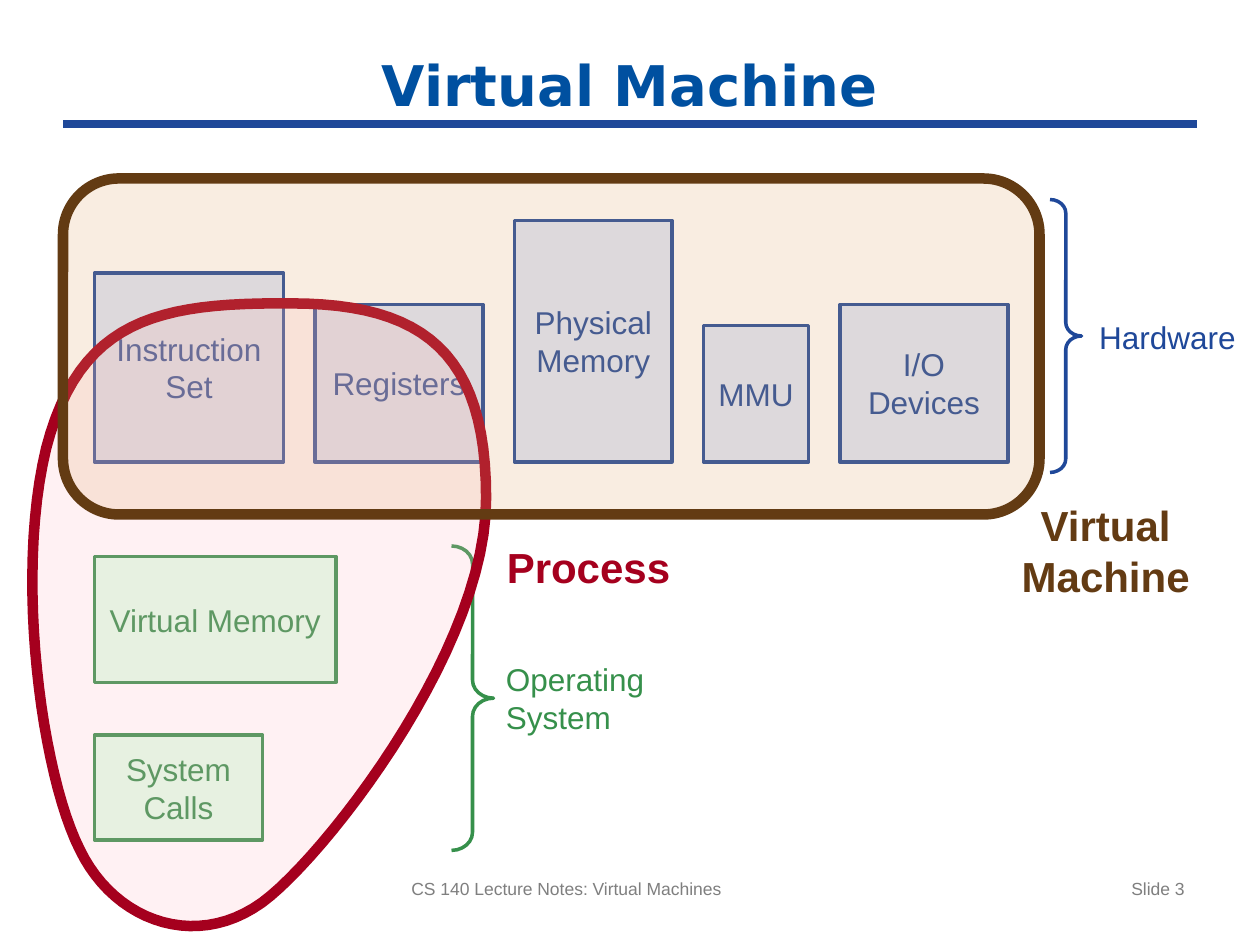
from lxml import etree
from pptx import Presentation
from pptx.dml.color import RGBColor
from pptx.enum.shapes import MSO_CONNECTOR, MSO_SHAPE
from pptx.enum.text import MSO_ANCHOR, PP_ALIGN
from pptx.oxml.ns import qn
from pptx.util import Pt

PX = 7620  # EMU per px, 120 px to the inch
RECT, ROUND, BRACE = MSO_SHAPE.RECTANGLE, MSO_SHAPE.ROUNDED_RECTANGLE, MSO_SHAPE.RIGHT_BRACE
LEFT, MID, RIGHT = PP_ALIGN.LEFT, PP_ALIGN.CENTER, PP_ALIGN.RIGHT

BLUE = RGBColor(0x1F, 0x48, 0x99)
PALE = RGBColor(0xDC, 0xE6, 0xF8)
GREEN = RGBColor(0x36, 0x90, 0x4B)
MINT = RGBColor(0xE1, 0xFF, 0xE8)
RED = RGBColor(0xA5, 0x00, 0x1E)
PINK = RGBColor(0xFF, 0xBA, 0xC7)
BROWN = RGBColor(0x63, 0x3B, 0x13)
TAN = RGBColor(0xE1, 0xA7, 0x6D)
GRAY = RGBColor(0x7F, 0x7F, 0x7F)
NAVY = RGBColor(0x00, 0x50, 0xA0)

deck = Presentation()
deck.slide_width, deck.slide_height = 1200 * PX, 900 * PX
slide = deck.slides.add_slide(deck.slide_layouts[5])
shapes = slide.shapes


def write(shape, text, size, color, align=MID, bold=False, font="Arial", wrap=True):
    frame = shape.text_frame
    frame.text = text
    frame.word_wrap = wrap
    for para in frame.paragraphs:
        para.alignment = align
        para.font.name, para.font.size = font, Pt(size)
        para.font.bold, para.font.color.rgb = bold, color


def paint(shape, line, width, fill=None, alpha=None):
    shape.shadow.inherit = False
    shape.line.color.rgb = line
    shape.line.width = Pt(width)
    if fill is None:
        shape.fill.background()
        return
    shape.fill.solid()
    shape.fill.fore_color.rgb = fill
    if alpha:
        tone = shape.fill._xPr.find(qn("a:solidFill"))[0]
        etree.SubElement(tone, qn("a:alpha")).set("val", str(alpha * 1000))


# Title and rule
title = shapes.title
title.left, title.top, title.width, title.height = 60 * PX, 40 * PX, 1080 * PX, 80 * PX
title.text_frame.vertical_anchor = MSO_ANCHOR.MIDDLE
write(title, "Virtual Machine", 32, NAVY, bold=True, font="DejaVu Sans")
rule = shapes.add_connector(MSO_CONNECTOR.STRAIGHT, 60 * PX, 118 * PX, 1140 * PX, 118 * PX)
rule.line.color.rgb = BLUE
rule.line.width = Pt(4.5)
etree.SubElement(rule._element.spPr, qn("a:effectLst"))

# Hardware boxes stand on one base line, system boxes below
BASE = 440
boxes = [
    ("Instruction\vSet", 90, BASE - 180, 180, 180, BLUE, PALE),
    ("Registers", 300, BASE - 150, 160, 150, BLUE, PALE),
    ("MMU", 670, BASE - 130, 100, 130, BLUE, PALE),
    ("I/O\nDevices", 800, BASE - 150, 160, 150, BLUE, PALE),
    ("Physical\nMemory", 490, BASE - 230, 150, 230, BLUE, PALE),
    ("Virtual Memory", 90, 530, 230, 120, GREEN, MINT),
    ("System\vCalls", 90, 700, 160, 100, GREEN, MINT),
]
for text, x, y, w, h, ink, fill in boxes:
    box = shapes.add_shape(RECT, x * PX, y * PX, w * PX, h * PX)
    paint(box, ink, 2, fill)
    box.text_frame.vertical_anchor = MSO_ANCHOR.MIDDLE
    write(box, text, 18, ink, wrap=False)

# Braces
for x, y, w, h, ink in [(430, 520, 40, 290, GREEN), (1000, 190, 30, 260, BLUE)]:
    brace = shapes.add_shape(BRACE, x * PX, y * PX, w * PX, h * PX)
    brace.adjustments[0] = 0.43
    paint(brace, ink, 2)

# Process outline: cubic curves, each a start, two handles and an end
curve = [
    (44, 427), (76, 304), (151, 288), (277, 289),
    (404, 289), (463, 337), (463, 474),
    (464, 611), (323, 798), (258, 853),
    (193, 908), (110, 880), (76, 809),
    (40, 738), (14, 551), (44, 427),
]
STEPS = 24
dots = []
for i in range(0, len(curve) - 1, 3):
    for n in range(STEPS):
        t = n / STEPS
        mix = ((1 - t) ** 3, 3 * t * (1 - t) ** 2, 3 * t * t * (1 - t), t ** 3)
        dots.append(tuple(
            round(PX * sum(m * p[k] for m, p in zip(mix, curve[i:i + 4]))) for k in (0, 1)
        ))
pen = shapes.build_freeform(*dots[0], scale=1.0)
pen.add_line_segments(dots[1:], close=True)
paint(pen.convert_to_shape(), RED, 6, PINK, 20)

# Virtual machine frame
frame = shapes.add_shape(ROUND, 60 * PX, 170 * PX, 930 * PX, 320 * PX)
paint(frame, BROWN, 6, TAN, 20)

# Labels and footer
labels = [
    ("Operating\vSystem", 470, 623, 157, 85, 18, GREEN, LEFT, False),
    ("Hardware", 1035, 297, 156, 48, 18, BLUE, LEFT, False),
    ("Process", 470, 510, 181, 60, 24, RED, MID, True),
    ("Virtual\vMachine", 960, 470, 186, 109, 24, BROWN, MID, True),
    ("CS 140 Lecture Notes: Virtual Machines", 380, 830, 450, 52, 10, GRAY, LEFT, False),
    ("Slide 3", 860, 830, 280, 52, 10, GRAY, RIGHT, False),
]
for text, x, y, w, h, size, ink, align, bold in labels:
    label = shapes.add_textbox(x * PX, y * PX, w * PX, h * PX)
    write(label, text, size, ink, align, bold, wrap=size == 10)

deck.save("out.pptx")
